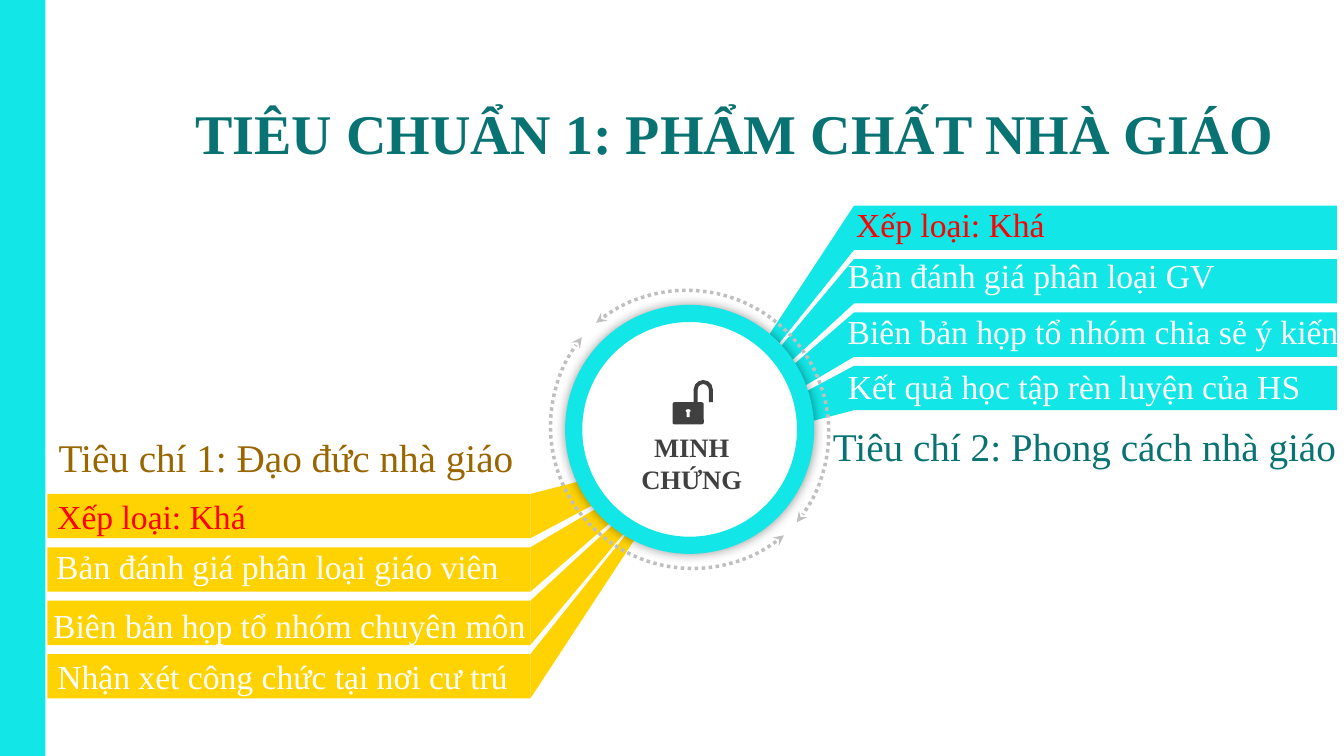
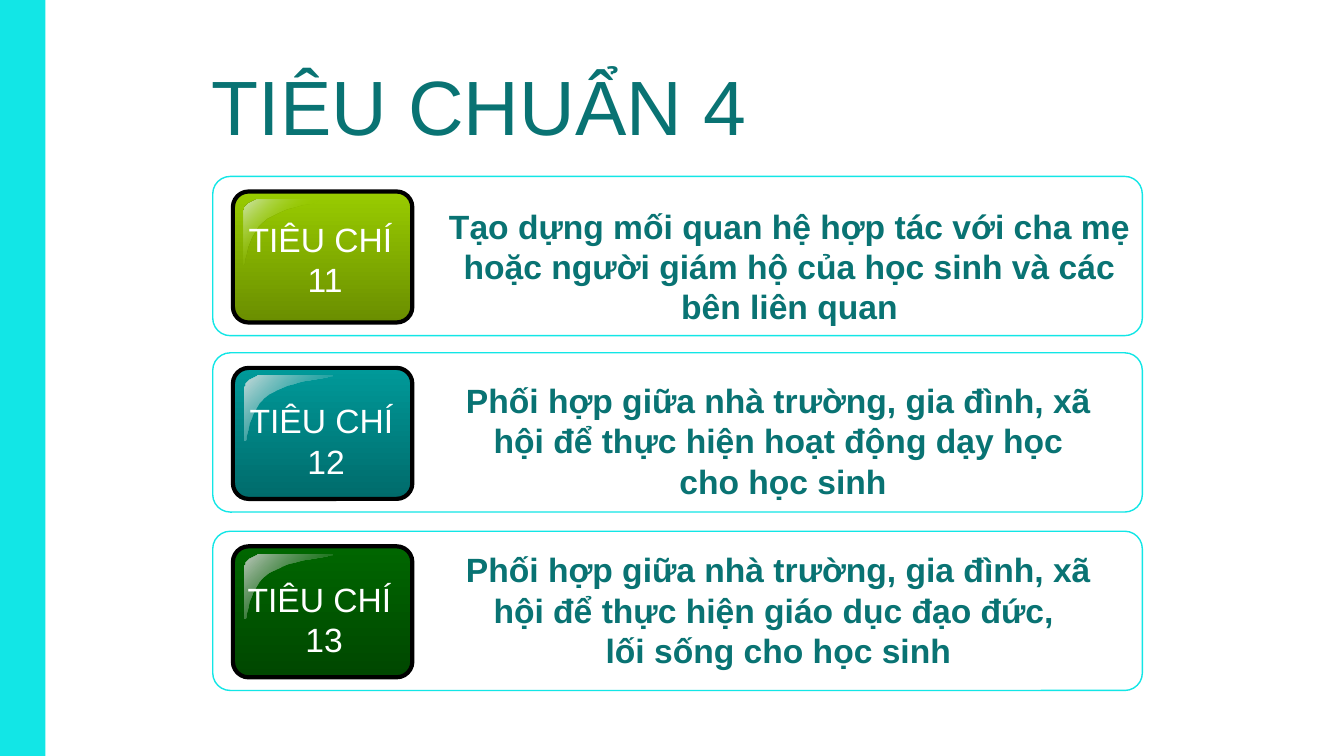
from lxml import etree
from pptx import Presentation
from pptx.dml.color import RGBColor
from pptx.enum.dml import MSO_LINE
from pptx.enum.shapes import MSO_SHAPE
from pptx.enum.text import MSO_ANCHOR, MSO_AUTO_SIZE, PP_ALIGN
from pptx.oxml.ns import qn
from pptx.util import Pt

PX = 9144
RECT, ROUND, OVAL = MSO_SHAPE.RECTANGLE, MSO_SHAPE.ROUNDED_RECTANGLE, MSO_SHAPE.OVAL
ARC, BLOCK = MSO_SHAPE.ARC, MSO_SHAPE.BLOCK_ARC
DOTS = MSO_LINE.ROUND_DOT
LEFT, MID, RIGHT = PP_ALIGN.LEFT, PP_ALIGN.CENTER, PP_ALIGN.RIGHT
CENTRE, FIXED = MSO_ANCHOR.MIDDLE, MSO_AUTO_SIZE.NONE
CYAN, TEAL, GOLD, BROWN = "12E6E6", "097373", "FFD302", "996600"
WHITE, BLACK, DARK, GREY, RED = "FFFFFF", "000000", "404040", "BFBFBF", "FF0000"
SERIF, SANS = "Times New Roman", "Arial"
tone = RGBColor.from_string


def style(shape, fill=None, line=None, width=0):
    shape.shadow.inherit = False
    if fill:
        shape.fill.solid()
        shape.fill.fore_color.rgb = tone(fill)
    else:
        shape.fill.background()
    if line:
        shape.line.color.rgb = tone(line)
        shape.line.width = Pt(width)
    else:
        shape.line.fill.background()
    return shape


def write(shape, box, lines, face, size, hue, bold=False, align=LEFT, wrap=True):
    shape.left, shape.top, shape.width, shape.height = [v * PX for v in box]
    frame = shape.text_frame
    frame.word_wrap = wrap
    frame.auto_size = FIXED
    for i, line in enumerate(lines):
        para = frame.add_paragraph() if i else frame.paragraphs[0]
        para.alignment = align
        run = para.add_run()
        run.text = line
        run.font.name = face
        run.font.size = Pt(size)
        run.font.bold = bold
        run.font.color.rgb = tone(hue)


deck = Presentation()
deck.slide_width, deck.slide_height = 1333 * PX, 750 * PX
base = deck.slide_layouts[5]

heads = [
    ("TIÊU CHUẨN 1: PHẨM CHẤT NHÀ GIÁO", (184, 96, 1149, 78), SERIF, 40, True),
    ("TIÊU CHUẨN 4", (200, 70, 1092, 79), SANS, 55, False),
]
for text, box, face, size, bold in heads:
    slide = deck.slides.add_slide(base)
    title = slide.shapes.title
    write(title, box, [text], face, size, TEAL, bold)
    title.text_frame.vertical_anchor = CENTRE
    title.text_frame.paragraphs[0].line_spacing = 0.9

first, last = [slide.shapes for slide in deck.slides]
band = style(first.add_shape(RECT, 0, 0, 45 * PX, 750 * PX), CYAN)
base.shapes.element.insert(2, band.element)

fans = [(847, 847, 204, CYAN), (47, 526, 490, GOLD)]
for left, edge, top, hue in fans:
    for i in range(4):
        y = top + 53 * i
        style(first.add_shape(RECT, left * PX, y * PX, 479 * PX, 44 * PX), hue)
        ray = first.build_freeform(edge, y, PX)
        ray.add_line_segments([(686, 449), (edge, y + 44)])
        style(ray.convert_to_shape(), hue)

ring = style(first.add_shape(OVAL, 569 * PX, 311 * PX, 230 * PX, 230 * PX), WHITE, CYAN, 12.25)
glow = etree.SubElement(
    ring.element.spPr.find(qn("a:effectLst")), qn("a:outerShdw"),
    blurRad=str(Pt(8)), dist="0", dir="0", algn="ctr", rotWithShape="0")
shade = etree.SubElement(glow, qn("a:srgbClr"), val=BLACK)
etree.SubElement(shade, qn("a:alpha"), val="40000")

notes = [
    (831, 197, 461, " Xếp loại: Khá", RED),
    (831, 248, 502, "Bản đánh giá phân loại GV", WHITE),
    (831, 304, 517, "Biên bản họp tổ nhóm chia sẻ ý kiến", WHITE),
    (831, 358, 558, "Kết quả học tập rèn luyện của HS", WHITE),
    (47, 487, 520, "Xếp loại: Khá", RED),
    (46, 537, 496, "Bản đánh giá phân loại giáo viên", WHITE),
    (43, 595, 523, "Biên bản họp tổ nhóm chuyên môn", WHITE),
    (47, 646, 476, "Nhận xét công chức tại nơi cư trú", WHITE),
]
for x, y, wide, text, hue in notes:
    write(first.add_textbox(0, 0, 0, 0), (x, y, wide, 50), [text], SERIF, 24, hue)

for x, y, turn in [(546, 282, 224.1), (540, 288, 44.5)]:
    arc = style(first.add_shape(ARC, x * PX, y * PX, 282 * PX, 282 * PX), None, GREY, 2.5)
    arc.adjustments[0], arc.adjustments[1] = 111.57, 212.83
    arc.rotation = turn
    arc.line.dash_style = DOTS
    for end in ("a:headEnd", "a:tailEnd"):
        etree.SubElement(arc.element.spPr.find(qn("a:ln")), qn(end), type="stealth")

write(first.add_textbox(0, 0, 0, 0), (612, 423, 148, 74), ["MINH CHỨNG"],
      SERIF, 19, DARK, True, MID)
for box, text, hue in [
    ((17, 425, 502, 57), "Tiêu chí 1: Đạo đức nhà giáo", BROWN),
    ((804, 414, 531, 57), "Tiêu chí 2: Phong cách nhà giáo", TEAL),
]:
    write(first.add_textbox(0, 0, 0, 0), box, [text], SERIF, 28, hue, align=RIGHT)

lock = [
    (ROUND, (667, 399, 31, 22), DARK, [0.09]),
    (BLOCK, (688, 377, 19, 19), DARK, [108, 0, 0.21]),
    (RECT, (688, 386, 4, 13), DARK, []),
    (RECT, (703, 386, 4, 13), DARK, []),
    (OVAL, (680, 406, 5, 3), WHITE, []),
    (RECT, (681, 408, 3, 6), WHITE, []),
]
for kind, box, hue, bends in lock:
    part = style(first.add_shape(kind, *[v * PX for v in box]), hue)
    for i, bend in enumerate(bends):
        part.adjustments[i] = bend

curves = [
    [(260, 0), (250, 0), (242, 6), (242, 13)],
    [(242, 64), (246, 65), (244, 33), (266, 19)],
    [(266, 19), (288, 4), (331, 3), (330, 0)],
]
gloss = []
for a, b, c, d in curves:
    for i in range(13):
        t = i / 12
        u = 1 - t
        gloss.append([
            a[k] * u ** 3 + 3 * b[k] * u * u * t + 3 * c[k] * u * t * t + d[k] * t ** 3
            for k in range(2)])

rows = [
    (175, "99CC00", "6A8E00", "D0E5B5", 0.5, "11", (236, 212), (199, 700),
     ["Tạo dựng mối quan hệ hợp tác với cha mẹ hoặc người giám hộ của học sinh và các bên liên quan"]),
    (350, "009999", "006B6B", "C9DBDB", 1, "12", (237, 392), (372, 678),
     ["Phối hợp giữa nhà trường, gia đình, xã hội để thực hiện hoạt động dạy học", " cho học sinh"]),
    (527, "006600", "004700", "BFC8BF", 1, "13", (235, 569), (540, 678),
     ["Phối hợp giữa nhà trường, gia đình, xã hội để thực hiện giáo dục đạo đức, ",
      "lối sống cho học sinh"]),
]
for top, hue, deep, pale, stop, mark, spot, (y, wide), lines in rows:
    card = style(last.add_shape(ROUND, 211 * PX, top * PX, 922 * PX, 158 * PX), WHITE, CYAN, 1)
    card.adjustments[0] = 0.11
    badge = style(last.add_shape(ROUND, 231 * PX, (top + 15) * PX, 178 * PX, 130 * PX),
                  hue, BLACK, 3)
    badge.adjustments[0] = 0.12
    path = [(px, py + top + 23) for px, py in gloss]
    sheen = last.build_freeform(*path[0], PX)
    sheen.add_line_segments(path[1:])
    shine = style(sheen.convert_to_shape(), pale)
    for shape, tones, turn in [(badge, (hue, deep), 270), (shine, (pale, hue), 315)]:
        shape.fill.gradient()
        shape.fill.gradient_angle = turn
        for point, shade in zip(shape.fill.gradient_stops, tones):
            point.color.rgb = tone(shade)
    shine.fill.gradient_stops[1].position = stop
    clear = list(shine.element.spPr.iter(qn("a:srgbClr")))[-1]
    etree.SubElement(clear, qn("a:alpha"), val="0")
    write(last.add_textbox(0, 0, 0, 0), (*spot, 173, 91), ["TIÊU CHÍ ", mark],
          SANS, 24, WHITE, align=MID, wrap=False)
    write(last.add_textbox(0, 0, 0, 0), (433, y, wide, 131), lines, SANS, 24, TEAL, True, MID)

deck.save("out.pptx")
